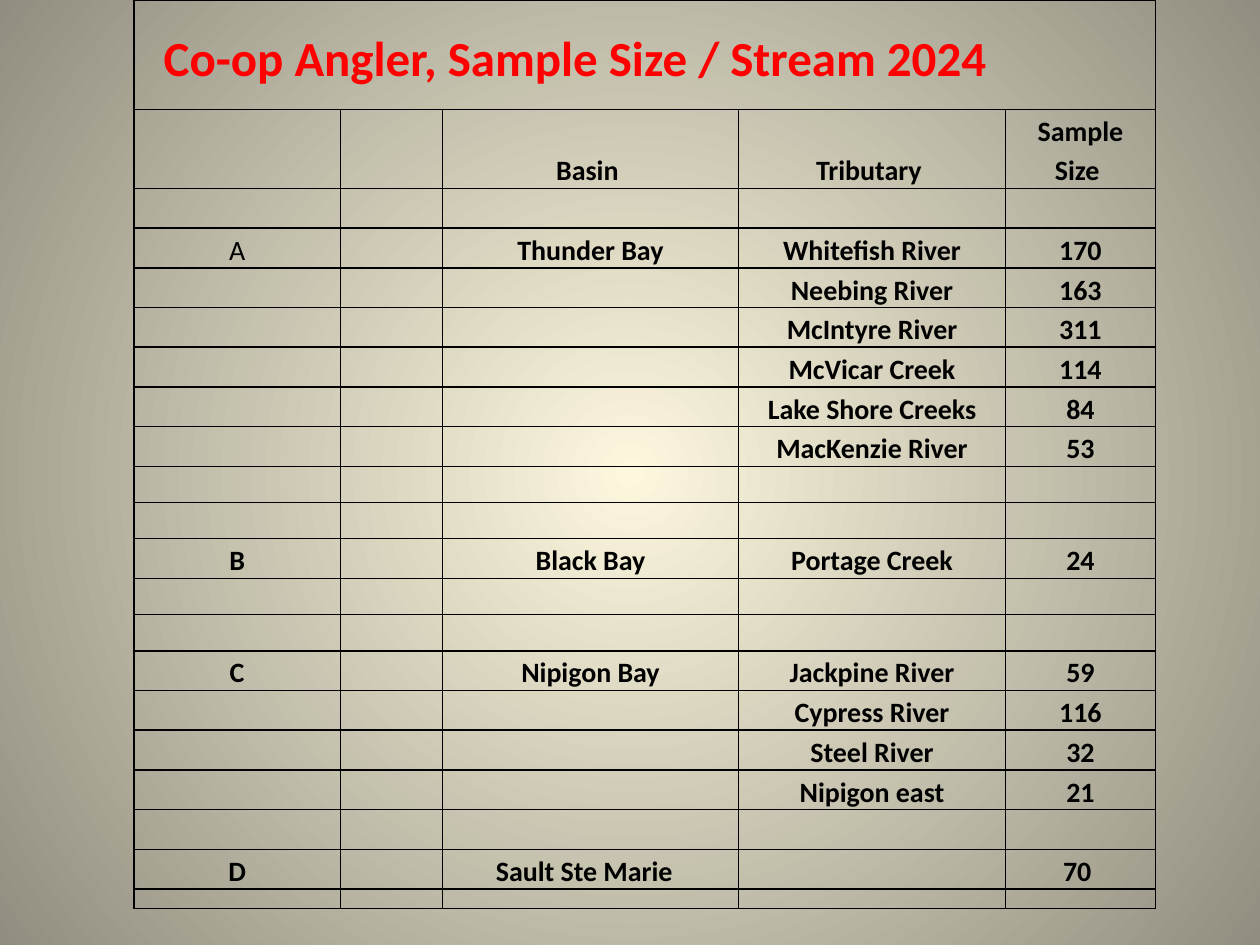
import lxml.etree
import pptx
import pptx.dml.color
import pptx.enum.text
import pptx.oxml.ns
import pptx.util

Cm, Pt = pptx.util.Cm, pptx.util.Pt
RGB = pptx.dml.color.RGBColor.from_string
qn = pptx.oxml.ns.qn
ENUM = pptx.enum.text

THEME = {
    "font": "Calibri", "ink": "000000", "title": "FF0000",
    "glow": "FCF7DD", "edge": "918E81",
    "big": 28, "body": 16, "tiny": 8, "rule": 1, "lead": 1.15,
}

TITLE = "Co-op Angler, Sample Size / Stream 2024"
WIDTHS = (4.16, 2.06, 5.97, 5.38, 3.02)
HEIGHTS = {"title": 1.8, "under": 0.41, "head": 1.59,
           "line": 0.8, "gap": 0.73, "end": 0.39}
# Row kind, then zone, basin, tributary and sample size
ROWS = [
    ("title",),
    ("under",),
    ("head", "", "Basin ", "Tributary ", "Sample Size "),
    ("line",),
    ("line", "A", "Thunder Bay", "Whitefish River", "170"),
    ("line", "", "", "Neebing River", "163"),
    ("line", "", "", "McIntyre River", "311"),
    ("line", "", "", "McVicar Creek", "114"),
    ("line", "", "", "Lake Shore Creeks", "84"),
    ("line", "", "", "MacKenzie River", "53"),
    ("gap",),
    ("gap",),
    ("line", "B", "Black Bay", "Portage Creek", "24"),
    ("gap",),
    ("gap",),
    ("line", "C", "Nipigon Bay", "Jackpine River", "59"),
    ("line", "", "", "Cypress River", "116"),
    ("line", "", "", "Steel River", "32"),
    ("line", "", "", "Nipigon east", "21"),
    ("line",),
    ("line", "D", "Sault Ste Marie  ", "", "70 "),
    ("end",),
]
SLOTS = (0, 2, 3, 4)  # column 1 stays empty


def paint(slide):
    """Fill the background with a glow from the centre."""
    fill = slide.background.fill
    fill.gradient()
    for stop, key, place in zip(fill.gradient_stops, ("glow", "edge"), (0, 1)):
        stop.color.rgb = RGB(THEME[key])
        stop.position = place
    grad = next(slide.element.iter(qn("a:gradFill")))
    grad.remove(grad.find(qn("a:lin")))
    path = lxml.etree.SubElement(grad, qn("a:path"), path="circle")
    lxml.etree.SubElement(path, qn("a:fillToRect"),
                          l="50000", t="50000", r="50000", b="50000")


def frame(cell, sides):
    """Rule the named sides and clear the others."""
    cell.fill.background()
    props = cell._tc.get_or_add_tcPr()
    for spot, side in enumerate("LRTB"):
        line = lxml.etree.Element(qn("a:ln" + side), w=str(Pt(THEME["rule"])))
        if side in sides:
            fill = lxml.etree.SubElement(line, qn("a:solidFill"))
            lxml.etree.SubElement(fill, qn("a:srgbClr"), val=THEME["ink"])
        else:
            lxml.etree.SubElement(line, qn("a:noFill"))
        props.insert(spot, line)


def edges(row, col):
    """Title rows are ruled only around the outside."""
    if row > 1:
        return "LRTB"
    side = {0: "L", len(WIDTHS) - 1: "R"}.get(col, "")
    return side + "TB"[row]


def write(cell, text, size, ink, bold=True):
    para = cell.text_frame.paragraphs[0]
    para.line_spacing = THEME["lead"]
    run = para.add_run()
    run.text = text
    font = run.font
    font.name, font.size, font.bold = THEME["font"], Pt(size), bold
    font.color.rgb = RGB(ink)
    return para


def build():
    deck = pptx.Presentation()
    deck.slide_width, deck.slide_height = Cm(25.4), Cm(19.05)
    slide = deck.slides.add_slide(deck.slide_layouts[6])
    paint(slide)

    tall = sum(HEIGHTS[row[0]] for row in ROWS)
    table = slide.shapes.add_table(
        len(ROWS), len(WIDTHS), Cm(2.7), 0, Cm(sum(WIDTHS)), Cm(tall)).table
    table.first_row = table.horz_banding = False
    for col, width in zip(table.columns, WIDTHS):
        col.width = Cm(width)

    for r, (kind, *words) in enumerate(ROWS):
        table.rows[r].height = Cm(HEIGHTS[kind])
        texts = dict(zip(SLOTS, words))
        for c in range(len(WIDTHS)):
            cell = table.cell(r, c)
            cell.margin_left = cell.margin_right = Cm(0.15)
            cell.margin_top = cell.margin_bottom = 0
            cell.vertical_anchor = ENUM.MSO_ANCHOR.BOTTOM
            frame(cell, edges(r, c))
            text = texts.get(c)
            if text:
                para = write(cell, text, THEME["body"], THEME["ink"], text != "A")
                para.alignment = ENUM.PP_ALIGN.CENTER
            elif (r, c) != (0, 0):
                # Small type keeps empty cells from stretching their row
                lxml.etree.SubElement(cell.text_frame.paragraphs[0]._p,
                                      qn("a:endParaRPr"),
                                      sz=str(THEME["tiny"] * 100))

    head = table.cell(0, 0)
    write(head, TITLE, THEME["big"], THEME["title"])
    head.margin_left = Cm(0.6)
    head.merge(table.cell(0, 3))
    deck.save("out.pptx")


if __name__ == "__main__":
    build()
